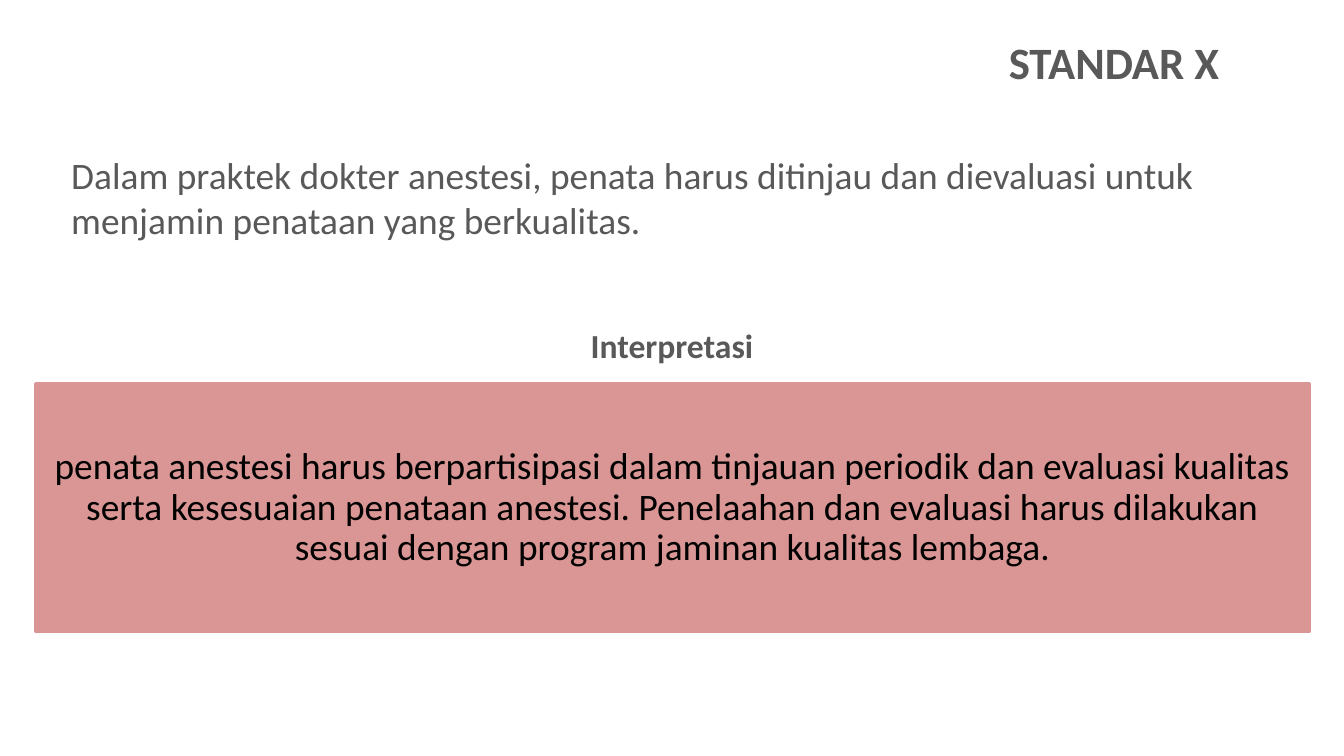
import pptx
import pptx.util
import pptx.dml.color
import pptx.enum.shapes
import pptx.enum.text

Inches = pptx.util.Inches
Pt = pptx.util.Pt
Align = pptx.enum.text.PP_ALIGN
Anchor = pptx.enum.text.MSO_ANCHOR

COLORS = {"gray": "595959", "rose": "D99694", "black": "000000"}


def color(name):
    return pptx.dml.color.RGBColor.from_string(COLORS[name])


def place(shape, left, top, width, height):
    shape.left, shape.top = Inches(left), Inches(top)
    shape.width, shape.height = Inches(width), Inches(height)


def write(shape, text, size, tone="gray", bold=False, align=Align.LEFT,
          anchor=Anchor.TOP):
    """Fill the shape with one wrapped paragraph and return that paragraph."""
    frame = shape.text_frame
    frame.word_wrap = True
    frame.auto_size = pptx.enum.text.MSO_AUTO_SIZE.NONE
    frame.vertical_anchor = anchor
    para = frame.paragraphs[0]
    para.alignment = align
    run = para.add_run()
    run.text = text
    run.font.name = "Calibri"
    run.font.size = Pt(size)
    run.font.bold = bold
    run.font.color.rgb = color(tone)
    return para


def add_label(slide, box, text, size, align):
    label = slide.shapes.add_textbox(*map(Inches, box))
    write(label, text, size, bold=True, align=align)


def add_panel(slide, box, text):
    panel = slide.shapes.add_shape(
        pptx.enum.shapes.MSO_SHAPE.RECTANGLE, *map(Inches, box))
    panel.shadow.inherit = False
    panel.fill.solid()
    panel.fill.fore_color.rgb = color("rose")
    panel.line.color.rgb = color("rose")
    panel.line.width = Pt(2)
    frame = panel.text_frame
    frame.margin_left = frame.margin_right = Inches(0.08)
    frame.margin_top = frame.margin_bottom = Inches(0.08)
    para = write(panel, text, 20, "black", align=Align.CENTER,
                 anchor=Anchor.MIDDLE)
    para.line_spacing = 0.9


def main():
    deck = pptx.Presentation()
    deck.slide_width, deck.slide_height = Inches(10), Inches(10 * 9 / 16)
    slide = deck.slides.add_slide(deck.slide_layouts[5])

    title = slide.shapes.title
    place(title, 0.43, 1.08, 9.13, 1.18)
    write(title, "Dalam praktek dokter anestesi, penata harus ditinjau dan "
          "dievaluasi untuk menjamin penataan yang berkualitas.", 20)

    add_label(slide, (3.19, 0.21, 5.98, 0.52), "STANDAR X", 24, Align.RIGHT)
    add_label(slide, (0.63, 2.37, 8.74, 0.44), "Interpretasi", 18,
              Align.CENTER)
    add_panel(slide, (0.27, 2.86, 9.47, 1.84),
              "penata anestesi harus berpartisipasi dalam tinjauan periodik "
              "dan evaluasi kualitas serta kesesuaian penataan anestesi. "
              "Penelaahan dan evaluasi harus dilakukan sesuai dengan program "
              "jaminan kualitas lembaga.")
    deck.save("out.pptx")


if __name__ == "__main__":
    main()
